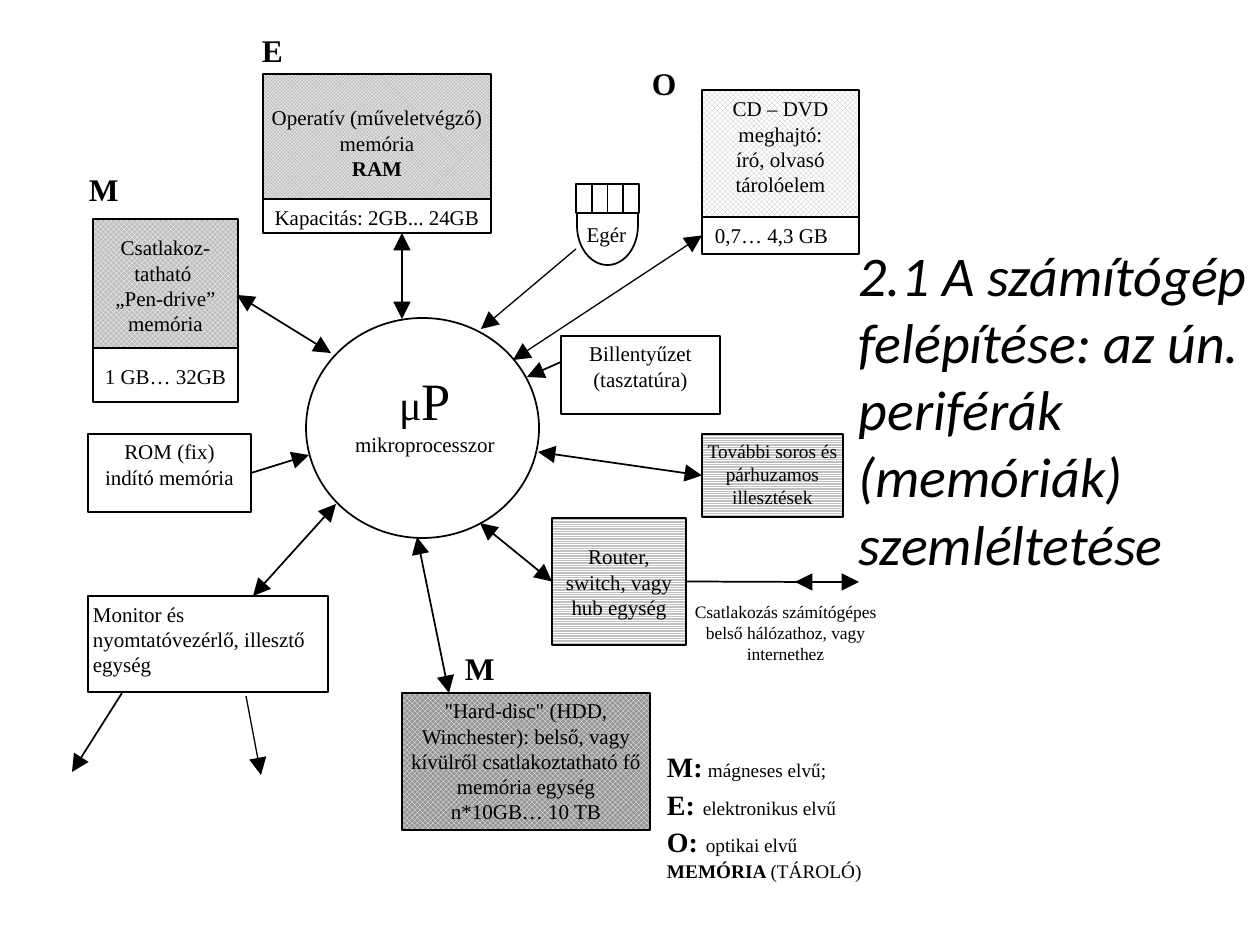
from dataclasses import dataclass

from pptx import Presentation
from pptx import util as u
from pptx.dml.color import RGBColor
from pptx.enum import dml, shapes, text
from pptx.oxml.ns import qn

SCALE = 914400 / 126  # EMU in one px


@dataclass(frozen=True)
class Theme:
    ink: RGBColor = RGBColor(0, 0, 0)
    paper: RGBColor = RGBColor(255, 255, 255)
    silver: RGBColor = RGBColor(0xC0, 0xC0, 0xC0)
    grey: RGBColor = RGBColor(0x96, 0x96, 0x96)
    heading_font: str = "Calibri"
    label_font: str = "Times New Roman"
    heading: int = 32
    chip: int = 30
    micro: int = 24
    letter: int = 18
    key: int = 16
    normal: int = 12
    small: int = 11
    caption: int = 10
    line: float = 1
    thin: float = 0.75


THEME = Theme()
PATTERN = dml.MSO_PATTERN
SHAPE = shapes.MSO_SHAPE
CENTER, LEFT = text.PP_ALIGN.CENTER, text.PP_ALIGN.LEFT
LEFT_SIDE, RIGHT_SIDE = 1, 3

# Pattern, foreground, background
CHECKED = (PATTERN.SMALL_CHECKER_BOARD, THEME.paper, THEME.silver)
STRIPED = (PATTERN.NARROW_HORIZONTAL, THEME.paper, THEME.silver)
WOVEN = (PATTERN.TRELLIS, THEME.paper, THEME.silver)
WOVEN_LIGHT = (PATTERN.TRELLIS, THEME.silver, THEME.paper)
WOVEN_DARK = (PATTERN.TRELLIS, THEME.paper, THEME.grey)


def px(*lengths):
    return [u.Emu(round(length * SCALE)) for length in lengths]


def apply(target, values):
    for name, value in values.items():
        setattr(target, name, value)


def write(shape, paragraphs, size=THEME.normal, align=CENTER, inset=(5, 5, 5, 5)):
    """Each paragraph is a string or a list of (text, size, bold) spans."""
    frame = shape.text_frame
    left, top, right, bottom = px(*inset)
    apply(frame, dict(word_wrap=True, vertical_anchor=text.MSO_ANCHOR.TOP,
                      margin_left=left, margin_top=top,
                      margin_right=right, margin_bottom=bottom))
    for number, spans in enumerate(paragraphs):
        para = frame.add_paragraph() if number else frame.paragraphs[0]
        para.alignment = align
        if isinstance(spans, str):
            spans = [(spans, size, False)]
        for words, points, bold in spans:
            span = para.add_run()
            span.text = words
            apply(span.font, dict(name=THEME.label_font, size=u.Pt(points), bold=bold))
            span.font.color.rgb = THEME.ink


def outline(page, kind, box, pattern=None):
    shape = page.shapes.add_shape(kind, *px(*box))
    shape.shadow.inherit = False
    shape.line.color.rgb = THEME.ink
    shape.line.width = u.Pt(THEME.line)
    if pattern:
        shape.fill.patterned()
        shape.fill.pattern = pattern[0]
        shape.fill.fore_color.rgb, shape.fill.back_color.rgb = pattern[1:]
    else:
        shape.fill.solid()
        shape.fill.fore_color.rgb = THEME.paper
    return shape


def device(page, box, paragraphs, pattern=None, **style):
    shape = outline(page, SHAPE.RECTANGLE, box, pattern)
    write(shape, paragraphs, **style)
    return shape


def memory_unit(page, box, strip, pattern, paragraphs, capacity, top=5, strip_style=None):
    """A patterned description above a white capacity strip; returns the strip."""
    x, y, w, h = box
    device(page, (x, y, w, h - strip), paragraphs, pattern, inset=(5, top, 5, 5))
    return device(page, (x, y + h - strip, w, strip), [capacity], **(strip_style or {}))


def label(page, box, paragraphs, **style):
    write(page.shapes.add_textbox(*px(*box)), paragraphs, **style)


def letter(page, x, y, name):
    label(page, (x, y, 60, 45), [[(name, THEME.letter, True)]], align=LEFT)


def processor(page, box):
    x, y, w, h = box
    outline(page, SHAPE.OVAL, box)
    label(page, (x + 27, y + 45, w - 49, 121),
          [[("μ", THEME.micro, False), ("P", THEME.chip, False)], "mikroprocesszor"])


def mouse(page, box, keys=4, key_height=29):
    x, y, w, h = box
    # The body is drawn lying down, then turned so the round end points down
    length, breadth = h - 2, w - 2
    body = outline(page, SHAPE.FLOWCHART_DELAY,
                   (x + (w - length) / 2, y + 2 + (length - breadth) / 2, length, breadth))
    body.rotation = 90
    for key in range(keys):
        outline(page, SHAPE.RECTANGLE, (x + key * w / keys, y, w / keys, key_height))
    label(page, (x - 1, y + 32, w, 48), ["Egér"], inset=(0, 6, 0, 6))


def arrow(page, start, end, heads=("tail",), weight=THEME.line, begin=None):
    """begin is an optional (shape, side) joint."""
    line = page.shapes.add_connector(shapes.MSO_CONNECTOR.STRAIGHT, *px(*start, *end))
    if begin:
        line.begin_connect(*begin)
    line.line.color.rgb = THEME.ink
    line.line.width = u.Pt(weight)
    properties = line._element.spPr
    stroke = properties.find(qn("a:ln"))
    for name in heads:
        stroke.append(stroke.makeelement(
            qn(f"a:{name}End"), {"type": "triangle", "w": "lg", "len": "lg"}))
    properties.append(properties.makeelement(qn("a:effectLst"), {}))


def heading(page, box, words):
    body = page.placeholders[1]
    apply(body, dict(zip(("left", "top", "width", "height"), px(*box))))
    apply(body.text_frame, dict(auto_size=text.MSO_AUTO_SIZE.NONE, margin_right=0))
    para = body.text_frame.paragraphs[0]
    span = para.add_run()
    span.text = words
    apply(span.font, dict(name=THEME.heading_font, size=u.Pt(THEME.heading), italic=True))
    span.font.color.rgb = THEME.ink
    # Indented block without a bullet
    layout = para._p.get_or_add_pPr()
    layout.set("marL", str(px(47)[0]))
    layout.set("indent", "0")
    layout.append(layout.makeelement(qn("a:buNone"), {}))


def legend(page, box):
    rows = [[("M:", THEME.key, True), (" ", THEME.normal, False),
             ("mágneses elvű;", THEME.small, False)]]
    for key, meaning in (("E:", "elektronikus elvű"), ("O:", "optikai elvű")):
        rows.append([(key, THEME.key, True), (" ", THEME.letter, True),
                     (meaning, THEME.small, False)])
    rows.append([("MEMÓRIA ", THEME.small, True), ("(TÁROLÓ)", THEME.small, False)])
    label(page, box, rows, align=LEFT)


def main():
    deck = Presentation()
    deck.slide_width, deck.slide_height = px(1260, 945)
    page = deck.slides.add_slide(deck.slide_layouts[1])
    title = page.shapes.title._element
    title.getparent().remove(title)
    heading(page, (799, 234, 461, 625),
            "2.1 A számítógép felépítése: az ún. periférák (memóriák) szemléltetése")

    # Memories with their capacities
    memory_unit(page, (263, 74, 228, 159), 34, CHECKED,
                ["Operatív (műveletvégző) memória", [("RAM", THEME.normal, True)]],
                "Kapacitás: 2GB... 24GB", top=31)
    memory_unit(page, (93, 219, 145, 183), 54, WOVEN,
                ["Csatlakoz-tatható ", "„Pen-drive” memória"], "1 GB… 32GB",
                top=16, strip_style=dict(inset=(5, 16, 5, 5)))
    disc = memory_unit(page, (702, 90, 157, 164), 37, WOVEN_LIGHT,
                       ["CD – DVD meghajtó:", "író, olvasó tárolóelem"], "0,7… 4,3 GB",
                       top=6, strip_style=dict(align=LEFT, inset=(13, 6, 13, 6)))
    device(page, (402, 693, 248, 137),
           ['"Hard-disc" (HDD, Winchester): belső, vagy kívülről csatlakoztatható fő '
            'memória egység', "n*10GB… 10 TB"], WOVEN_DARK)

    # Other devices around the processor
    processor(page, (306, 318, 233, 220))
    device(page, (561, 336, 159, 78), ["Billentyűzet (tasztatúra)"])
    serial = device(page, (702, 434, 141, 83), ["További soros és párhuzamos illesztések"],
                    STRIPED, size=THEME.small)
    router = device(page, (552, 518, 134, 127), ["Router, switch, vagy hub egység"],
                    STRIPED, inset=(5, 26, 5, 5))
    device(page, (88, 596, 240, 96), ["Monitor és nyomtatóvezérlő, illesztő egység"], align=LEFT)
    rom = device(page, (88, 434, 163, 78), ["ROM (fix)", "indító memória"])
    mouse(page, (576, 184, 63, 81))

    # Links to the processor
    both = ("head", "tail")
    arrow(page, (702, 235), (513, 360), both, THEME.thin, begin=(disc, LEFT_SIDE))
    arrow(page, (576, 249), (481, 329), weight=THEME.thin)
    arrow(page, (449, 693), (417, 537), both)
    arrow(page, (402, 233), (402, 319), both)
    arrow(page, (561, 362), (527, 377))
    arrow(page, (251, 473), (309, 455), begin=(rom, RIGHT_SIDE))
    arrow(page, (336, 504), (253, 596), both)
    arrow(page, (237, 295), (331, 353), both)
    arrow(page, (702, 476), (538, 452), both, begin=(serial, LEFT_SIDE))
    arrow(page, (552, 582), (480, 523), both, begin=(router, LEFT_SIDE))

    # Links to the outside
    arrow(page, (246, 696), (261, 775), weight=THEME.thin)
    arrow(page, (122, 693), (72, 772))
    arrow(page, (686, 582), (809, 582), (), begin=(router, RIGHT_SIDE))
    arrow(page, (795, 582), (859, 582), both)

    # Memory type letters, caption and legend
    for x, y, name in ((257, 26, "E"), (84, 165, "M"), (460, 644, "M"), (647, 59, "O")):
        letter(page, x, y, name)
    label(page, (688, 596, 195, 106),
          ["Csatlakozás számítógépes belső hálózathoz, vagy internethez"], size=THEME.caption)
    legend(page, (662, 745, 215, 139))

    deck.save("out.pptx")


if __name__ == "__main__":
    main()
